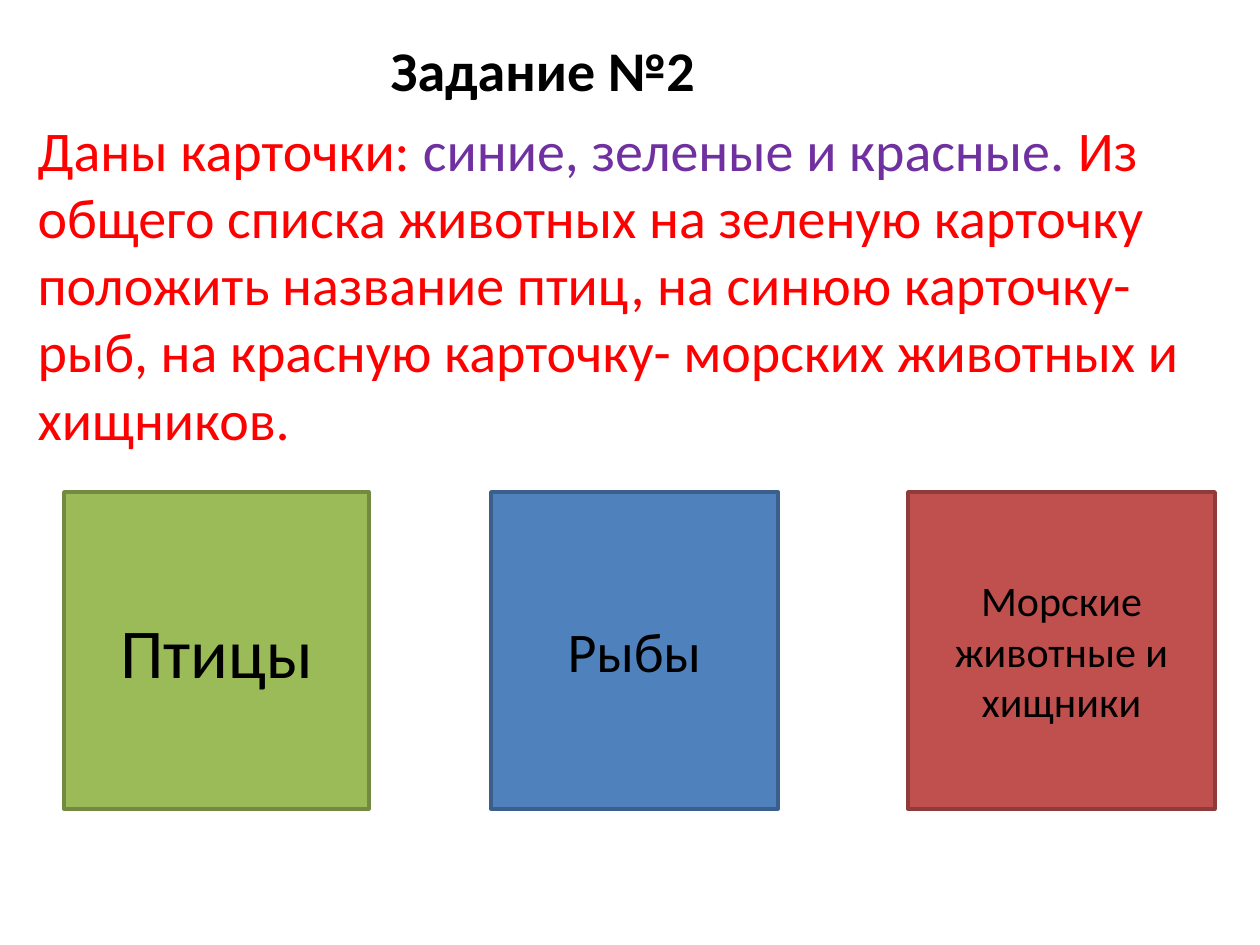
from pptx import Presentation
from pptx.dml.color import RGBColor
from pptx.enum.shapes import MSO_SHAPE
from pptx.enum.text import MSO_ANCHOR, MSO_AUTO_SIZE, PP_ALIGN
from pptx.oxml.xmlchemy import OxmlElement
from pptx.util import Pt

PX = 914400 // 126
BLACK = RGBColor(0x00, 0x00, 0x00)
RED = RGBColor(0xFF, 0x00, 0x00)
PURPLE = RGBColor(0x70, 0x30, 0xA0)
GREEN_FILL, GREEN_LINE = RGBColor(0x9B, 0xBB, 0x59), RGBColor(0x73, 0x8A, 0x42)
BLUE_FILL, BLUE_LINE = RGBColor(0x4F, 0x81, 0xBD), RGBColor(0x3A, 0x5F, 0x8C)
RED_FILL, RED_LINE = RGBColor(0xC0, 0x50, 0x4D), RGBColor(0x8E, 0x3B, 0x39)

TASK = [
    ("Даны карточки: ", RED),
    ("синие, зеленые и красные. ", PURPLE),
    ("Из общего списка животных на зеленую карточку положить название птиц, "
     "на синюю карточку- рыб, на красную карточку- морских животных и хищников.", RED),
]
# left, width, label, text size, fill, line
CARDS = [
    (64, 305, "Птицы", 40, GREEN_FILL, GREEN_LINE),
    (491, 287, "Рыбы", 32, BLUE_FILL, BLUE_LINE),
    (908, 307, "Морские животные и хищники", 24, RED_FILL, RED_LINE),
]


def place(shape, left, top, width, height):
    shape.left, shape.top = left * PX, top * PX
    shape.width, shape.height = width * PX, height * PX


def set_font(paragraph, size, bold=False):
    font = paragraph.font
    font.name, font.size, font.bold = "Calibri", Pt(size), bold


def fill_title(title, box):
    place(title, *box)
    frame = title.text_frame
    frame.text = "Задание №2"
    frame.auto_size = MSO_AUTO_SIZE.NONE
    frame.vertical_anchor = MSO_ANCHOR.MIDDLE
    frame.margin_top = frame.margin_bottom = 0
    paragraph = frame.paragraphs[0]
    paragraph.alignment = PP_ALIGN.CENTER
    set_font(paragraph, 32, bold=True)
    paragraph.font.color.rgb = BLACK


def fill_task(body, box):
    place(body, *box)
    frame = body.text_frame
    frame.auto_size = MSO_AUTO_SIZE.NONE
    paragraph = frame.paragraphs[0]
    paragraph.space_before = Pt(0)
    set_font(paragraph, 32)
    properties = paragraph._p.get_or_add_pPr()
    properties.set("marL", "0")
    properties.set("indent", "0")
    properties.insert_element_before(
        OxmlElement("a:buNone"), "a:tabLst", "a:defRPr", "a:extLst")
    for text, color in TASK:
        run = paragraph.add_run()
        run.text = text
        run.font.color.rgb = color


def add_card(slide, box, label, size, fill, line):
    card = slide.shapes.add_shape(MSO_SHAPE.RECTANGLE, *(length * PX for length in box))
    card.shadow.inherit = False
    card.fill.solid()
    card.fill.fore_color.rgb = fill
    card.line.color.rgb = line
    card.line.width = Pt(2)
    frame = card.text_frame
    frame.word_wrap = True
    frame.vertical_anchor = MSO_ANCHOR.MIDDLE
    frame.text = label
    paragraph = frame.paragraphs[0]
    paragraph.alignment = PP_ALIGN.CENTER
    set_font(paragraph, size)
    paragraph.font.color.rgb = BLACK


def add_cards(slide, top, height):
    for left, width, *style in CARDS:
        add_card(slide, (left, top, width, height), *style)


def main():
    presentation = Presentation()
    presentation.slide_width, presentation.slide_height = 1260 * PX, 945 * PX
    slide = presentation.slides.add_slide(presentation.slide_layouts[1])
    fill_title(slide.shapes.title, (25, 35, 1036, 68))
    fill_task(slide.placeholders[1], (25, 109, 1211, 376))
    add_cards(slide, 492, 317)
    presentation.save("out.pptx")


if __name__ == "__main__":
    main()
